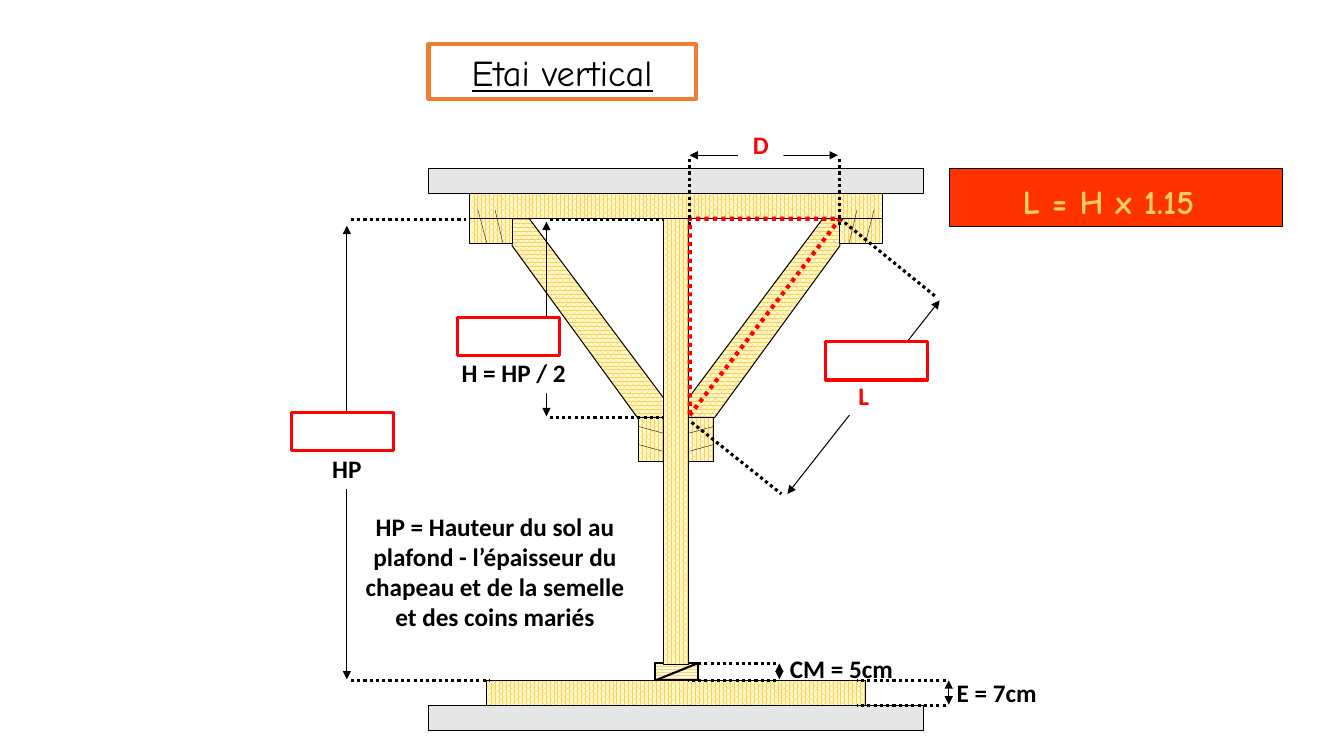
from lxml import etree
from pptx import Presentation
from pptx.dml.color import RGBColor
from pptx.enum.dml import MSO_LINE, MSO_PATTERN
from pptx.enum.shapes import MSO_CONNECTOR, MSO_SHAPE
from pptx.enum.text import MSO_ANCHOR, MSO_AUTO_SIZE, PP_ALIGN
from pptx.oxml.ns import qn
from pptx.util import Pt

PX = 9144
RECT = MSO_SHAPE.RECTANGLE
LINE = MSO_CONNECTOR.STRAIGHT
DOT = MSO_LINE.ROUND_DOT
GRAIN = MSO_PATTERN.PERCENT_75
ZIGZAG = MSO_PATTERN.ZIG_ZAG
CENTER = PP_ALIGN.CENTER
TOP = MSO_ANCHOR.TOP
MIDDLE = MSO_ANCHOR.MIDDLE
FIXED = MSO_AUTO_SIZE.NONE
BODY = "Calibri"
COMIC = "Comic Neue"
COLORS = {
    "black": "000000", "white": "FFFFFF", "grey": "E7E6E6",
    "orange": "ED7D31", "red": "FF0000", "flame": "FF3300",
    "gold": "FFCC66", "peach": "FFCC99", "cream": "FFFFCC",
}


def color(name):
    return RGBColor.from_string(COLORS[name])


def style(shape, fill, line="black", width=0.75):
    shape.shadow.inherit = False
    shape.fill.solid()
    shape.fill.fore_color.rgb = color(fill)
    shape.line.color.rgb = color(line)
    shape.line.width = Pt(width)


def wood(shape, width=0.75, pattern=GRAIN, tint="gold"):
    style(shape, "cream", width=width)
    shape.fill.patterned()
    shape.fill.pattern = pattern
    shape.fill.fore_color.rgb = color(tint)
    shape.fill.back_color.rgb = color("cream")


def rect(slide, x, y, w, h):
    return slide.shapes.add_shape(RECT, x * PX, y * PX, w * PX, h * PX)


def outline(slide, x, y, points):
    (u, v), *rest = [(x + a, y + b) for a, b in points]
    form = slide.shapes.build_freeform(u, v, scale=PX)
    form.add_line_segments(rest, close=True)
    return form.convert_to_shape()


def line(slide, x, y, ends, width, dash=None, arrows=False):
    a, b, c, d = ends
    item = slide.shapes.add_connector(
        LINE, (x + a) * PX, (y + b) * PX, (x + c) * PX, (y + d) * PX)
    item.line.color.rgb = color("black")
    item.line.width = Pt(width)
    if dash:
        item.line.dash_style = dash
    props = item._element.spPr
    if arrows:
        for tag in ("a:headEnd", "a:tailEnd"):
            etree.SubElement(props.find(qn("a:ln")), qn(tag), type="triangle")
    etree.SubElement(props, qn("a:effectLst"))


def write(shape, text, size, font, tint, bold=False, under=False, anchor=TOP):
    frame = shape.text_frame
    frame.word_wrap = True
    frame.auto_size = FIXED
    frame.vertical_anchor = anchor
    para = frame.paragraphs[0]
    para.alignment = CENTER
    run = para.add_run()
    run.text = text
    run.font.size = Pt(size)
    run.font.name = font
    run.font.color.rgb = color(tint)
    run.font.bold = bold
    run.font.underline = under


def label(slide, box, text, tint="black", fill=None, size=18, font=BODY):
    item = slide.shapes.add_textbox(*[n * PX for n in box])
    if fill:
        item.fill.solid()
        item.fill.fore_color.rgb = color(fill)
    write(item, text, size, font, tint, bold=True)


def title(slide, box):
    item = slide.shapes.title
    item.left, item.top, item.width, item.height = [n * PX for n in box]
    item.line.color.rgb = color("orange")
    item.line.width = Pt(3)
    write(item, "Etai vertical", 26, COMIC, "black", under=True, anchor=MIDDLE)


def shore(slide, box):
    x, y, w, h = box
    for top in (0, h - 25):
        style(rect(slide, x, y + top, w, 25), "grey")
    wood(rect(slide, x + 58, y + h - 50, 375, 25))
    wood(rect(slide, x + 225, y + 491, 42, 17), 1.5, ZIGZAG, "peach")
    line(slide, x, y, (267, 491, 225, 508), 1.5)
    wood(rect(slide, x + 41, y + 25, 409, 25))
    brace = [(257, 229), (391, 50), (408, 50), (408, 77), (284, 247), (257, 247)]
    blocks = [
        (258, 247, 25, 44, [(250, 265, 283, 256), (250, 283, 283, 274)]),
        (408, 50, 42, 25, [(425, 41, 417, 75), (442, 41, 433, 75)]),
    ]
    for flip in (False, True):
        wood(outline(slide, x, y, [(w - a if flip else a, b) for a, b in brace]))
        for left, top, wide, high, cracks in blocks:
            start = w - left - wide if flip else left
            wood(rect(slide, x + start, y + top, wide, high))
            for a, b, c, d in cracks:
                ends = (w - a, b, w - c, d) if flip else (a, b, c, d)
                line(slide, x, y, ends, 0.25)
    wood(rect(slide, x + 233, y + 50, 25, 442))


def gauge(slide, box, arrow, leads):
    x, y = box[:2]
    line(slide, x, y, arrow, 0.75, arrows=True)
    for lead in leads:
        line(slide, x, y, lead, 2.25, DOT)


def level(slide, box, leads, inset):
    w, h = box[2:]
    first, last = leads
    gauge(slide, box, (0, inset, 0, h - 1),
          [(w, h, last, h), (w, 0, first, 0)])


def slant(slide, box):
    w, h = box[2:]
    gauge(slide, box, (95, h, w, 81), [(147, 0, 243, 78), (0, 202, 89, h)])


def span(slide, box):
    w, h = box[2:]
    gauge(slide, box, (w - 2, 0, 0, 0), [(a, h, a, 2) for a in (0, w)])


def blank(slide, x, y):
    style(rect(slide, x, y, 101, 38), "white", "red", 2.25)


def rule(slide, box):
    x, y, w, h = box
    style(rect(slide, *box), "flame")
    label(slide, (x - 11, y + 8, w - 5, h - 7), " L = H x 1.15",
          "gold", size=24, font=COMIC)


def sides(slide, box):
    x, y, w, h = box
    item = outline(slide, x, y, [(0, h), (w, 0), (0, 0)])
    style(item, "white", "red", 3)
    item.fill.background()
    item.line.dash_style = DOT


def main():
    deck = Presentation()
    deck.slide_width, deck.slide_height = 1333 * PX, 750 * PX
    slide = deck.slides.add_slide(deck.slide_layouts[5])
    title(slide, (425, 44, 265, 54))
    shore(slide, (425, 167, 491, 558))
    rule(slide, (942, 167, 330, 58))

    level(slide, (344, 218, 4, 457), (118, 142), 6)
    label(slide, (307, 445, 74, 40), "HP", fill="white")
    label(slide, (348, 502, 286, 131),
          "HP = Hauteur du sol au plafond - l’épaisseur du chapeau "
          "et de la semelle et des coins mariés")
    level(slide, (542, 218, 3, 196), (117, 117), 2)
    label(slide, (441, 350, 137, 40), "H = HP / 2", fill="white")
    slant(slide, (686, 217, 246, 273))
    label(slide, (834, 372, 45, 40), "L", "red", "white")
    label(slide, (930, 667, 117, 40), "E = 7cm", fill="white")
    level(slide, (941, 675, -3, 25), (-91, -91), 0)
    level(slide, (773, 658, -3, 17), (-91, -91), 0)
    label(slide, (755, 643, 159, 40), "CM = 5cm")

    sides(slide, (684, 217, 149, 195))
    for x, y in ((289, 409), (819, 339), (454, 315)):
        blank(slide, x, y)
    span(slide, (684, 154, 149, 69))
    label(slide, (732, 123, 45, 40), "D", "red", "white")
    deck.save("out.pptx")


if __name__ == "__main__":
    main()
